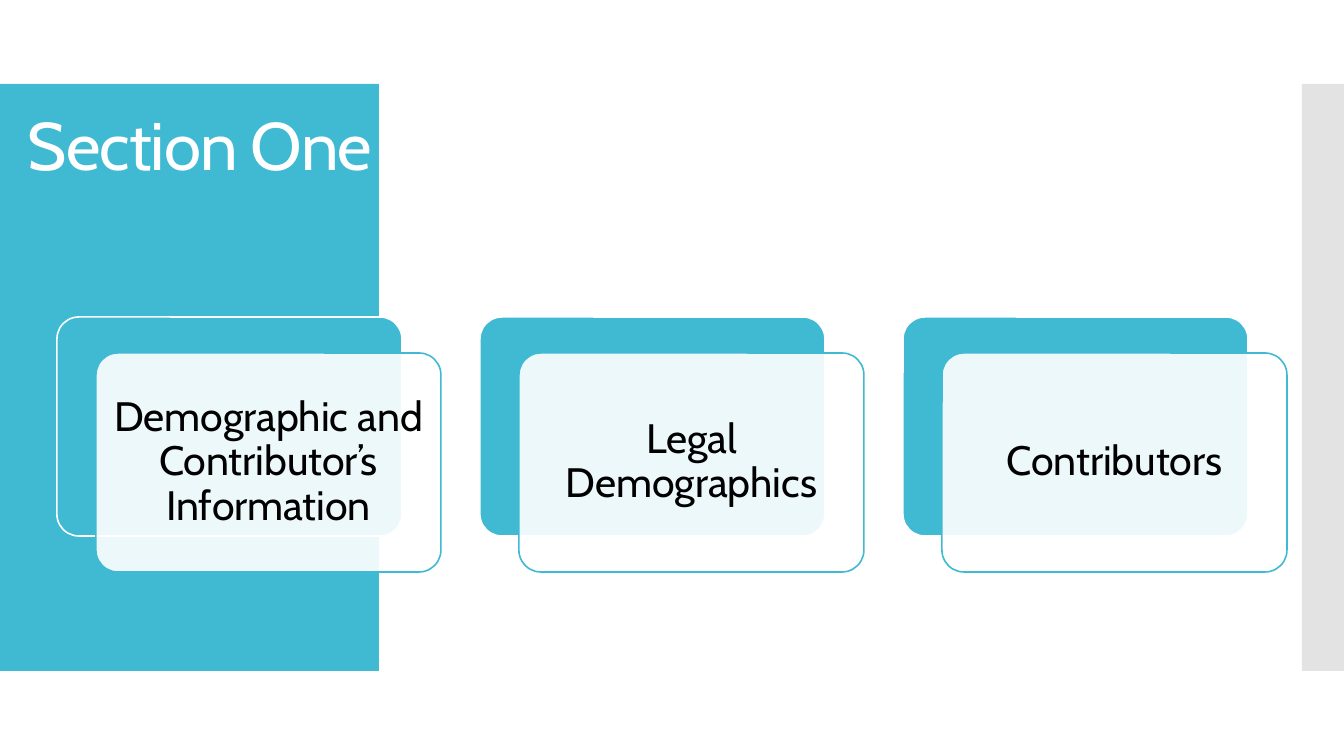
import pptx
import pptx.util
import pptx.dml.color
import pptx.enum.shapes
import pptx.enum.text
import pptx.oxml.ns
import lxml.etree

PX = 914400 / 134.4
TEAL, WHITE, GRAY, BLACK = "40BAD2", "FFFFFF", "C8C8C8", "000000"
SHAPES = pptx.enum.shapes.MSO_SHAPE
ANCHOR = pptx.enum.text.MSO_ANCHOR
ALIGN = pptx.enum.text.PP_ALIGN


def color(value):
    return pptx.dml.color.RGBColor.from_string(value)


def emu(*lengths):
    return [round(length * PX) for length in lengths]


class SlideBuilder:
    """Holds the text style and current slide, and draws its elements."""

    def __init__(self, slide, font="Cabin"):
        self.slide = slide
        self.font = font

    def block(self, bounds, fill, line=None, opacity=100, rounded=False):
        kind = SHAPES.ROUNDED_RECTANGLE if rounded else SHAPES.RECTANGLE
        shape = self.slide.shapes.add_shape(kind, *emu(*bounds))
        shape.shadow.inherit = False
        if rounded:
            shape.adjustments[0] = 0.1
        shape.fill.solid()
        shape.fill.fore_color.rgb = color(fill)
        if opacity < 100:
            tint = shape._element.spPr.find(".//" + pptx.oxml.ns.qn("a:srgbClr"))
            alpha = lxml.etree.SubElement(tint, pptx.oxml.ns.qn("a:alpha"))
            alpha.set("val", str(opacity * 1000))
        if line:
            shape.line.color.rgb = color(line)
            shape.line.width = pptx.util.Pt(0.85)
        else:
            shape.line.fill.background()

    def text(self, bounds, words, size, ink, inset, anchor, align, line_spacing=1.0, tracking=0):
        box = self.slide.shapes.add_textbox(*emu(*bounds))
        frame = box.text_frame
        frame.word_wrap = True
        frame.vertical_anchor = anchor
        margin = emu(inset)[0]
        frame.margin_left = frame.margin_right = margin
        frame.margin_top = frame.margin_bottom = margin
        frame.text = words
        para = frame.paragraphs[0]
        para.alignment = align
        para.line_spacing = line_spacing
        span = para.runs[0]
        span.font.name = self.font
        span.font.size = pptx.util.Pt(size)
        span.font.color.rgb = color(ink)
        if tracking:
            span._r.get_or_add_rPr().set("spc", str(tracking))

    def card(self, left, top, words):
        width, height, inner = 345, 219, 6
        front_left, front_top = left + 39, top + 36
        self.block((left, top, width, height), TEAL, WHITE, rounded=True)
        self.block((front_left, front_top, width, height), WHITE, TEAL, 90, True)
        bounds = (front_left + inner, front_top + inner, width - 2 * inner, height - 2 * inner)
        self.text(bounds, words, 22, BLACK, 12, ANCHOR.MIDDLE, ALIGN.CENTER, 0.9)


def main():
    deck = pptx.Presentation()
    deck.slide_width, deck.slide_height = emu(1344, 756)
    page = SlideBuilder(deck.slides.add_slide(deck.slide_layouts[6]))
    page.block((0, 84, 379, 587), TEAL)
    page.block((1302, 84, 42, 587), GRAY, opacity=50)
    page.text((15, 67, 1273, 130), "Section One", 36, WHITE, 13,
              ANCHOR.BOTTOM, ALIGN.LEFT, tracking=-50)
    topics = ["Demographic and Contributor’s Information", "Legal Demographics", "Contributors"]
    for index, topic in enumerate(topics):
        page.card(57 + 423 * index, 317, topic)
    deck.save("out.pptx")


if __name__ == "__main__":
    main()
